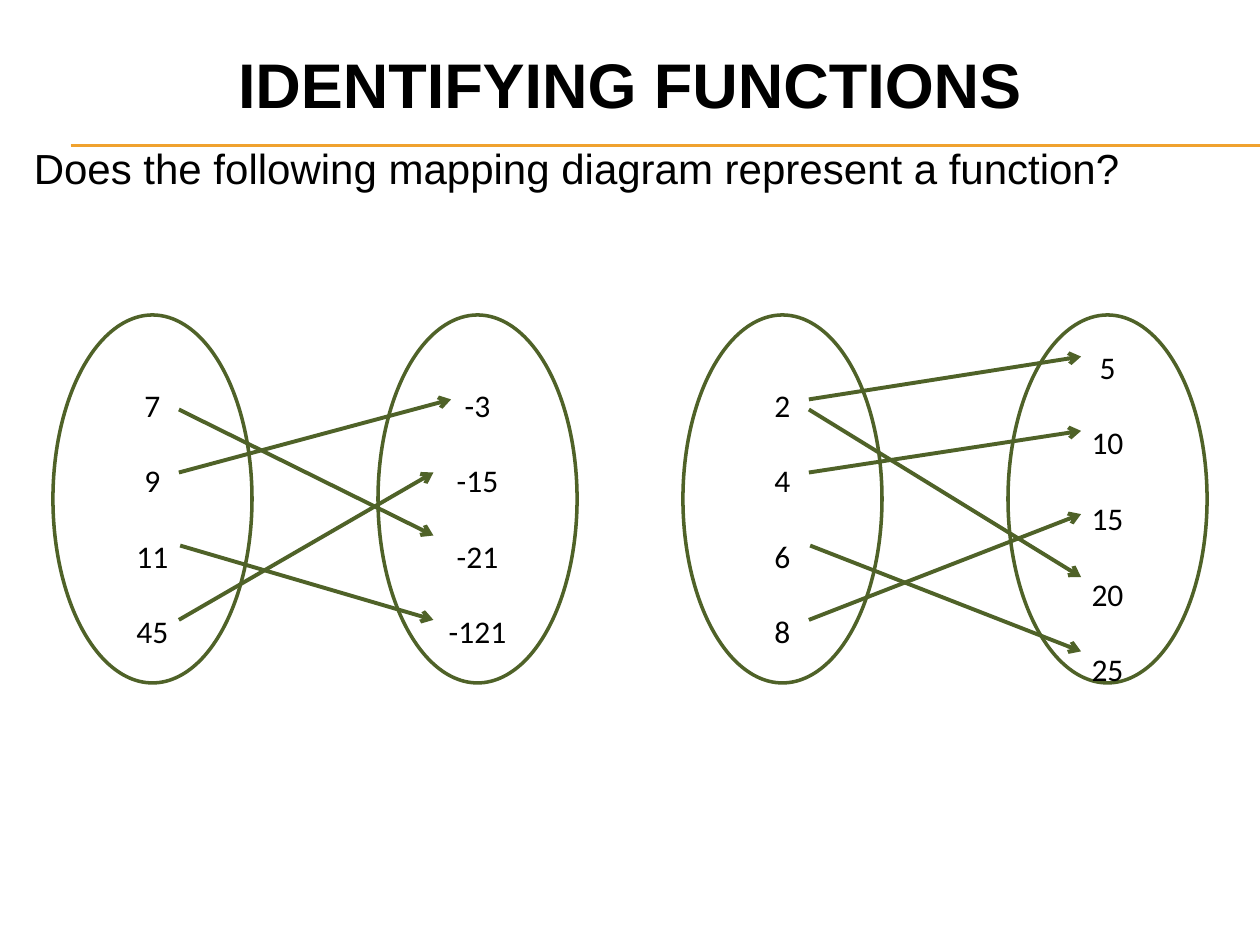
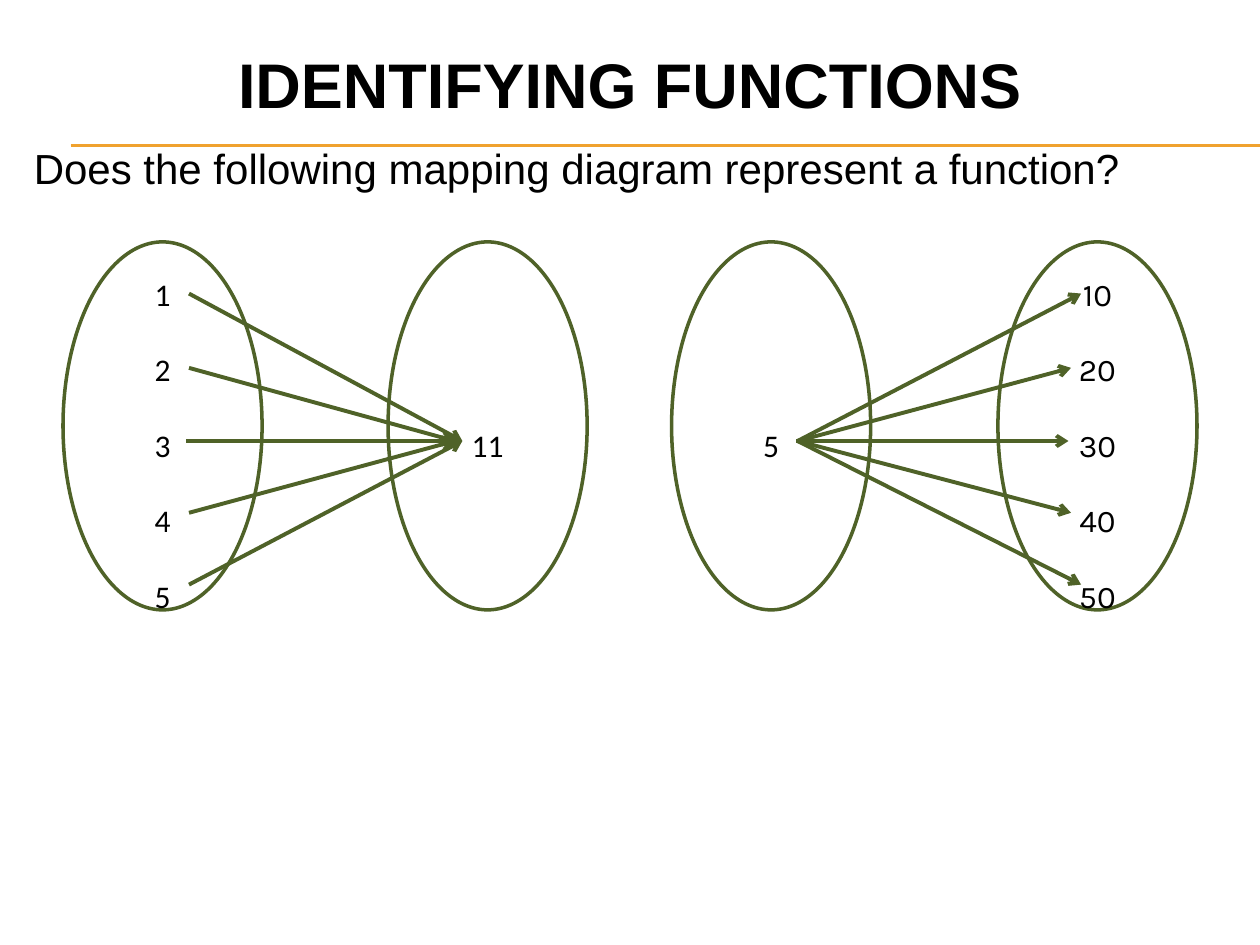
import pptx
import pptx.util
import pptx.dml.color
import pptx.enum.shapes
import pptx.enum.text
import pptx.oxml.ns
import lxml.etree

Inches, Pt = pptx.util.Inches, pptx.util.Pt
ALIGN, ANCHOR = pptx.enum.text.PP_ALIGN, pptx.enum.text.MSO_ANCHOR
BLACK, WHITE, GREEN, GOLD = "000000", "FFFFFF", "4F6228", "F0A22E"
OVAL_WIDTH, OVAL_HEIGHT = 1.58, 2.92


def write(paragraph, text, font, size, bold=False):
    run = paragraph.add_run()
    run.text = text
    run.font.name = font
    run.font.size = Pt(size)
    run.font.bold = bold
    run.font.color.rgb = pptx.dml.color.RGBColor.from_string(BLACK)


def draw_line(slide, start, end, color, width, arrow=False):
    line = slide.shapes.add_connector(
        pptx.enum.shapes.MSO_CONNECTOR.STRAIGHT, *map(Inches, start + end))
    line.line.color.rgb = pptx.dml.color.RGBColor.from_string(color)
    line.line.width = Pt(width)
    qn = pptx.oxml.ns.qn
    if arrow:
        lxml.etree.SubElement(line.line._get_or_add_ln(), qn("a:tailEnd"), type="arrow")
    lxml.etree.SubElement(line.element.spPr, qn("a:effectLst"))
    return line


# Each slide: top of its ovals, the ovals as (left, font, values),
# and the arrows as (from x, from y, to x, to y).
mapping_slides = [
    (2.5,
     [(0.42, "Calibri", ["7", "9", "11", "45"]),
      (3, "Calibri", ["-3", "-15", "-21", "-121"]),
      (5.42, "Calibri", ["2", "4", "6", "8"]),
      (8, "Calibri", ["5", "10", "15", "20", "25"])],
     [(1.42, 3.75, 3.58, 3.17), (1.43, 4.33, 3.44, 4.92),
      (1.42, 4.92, 3.44, 3.75), (1.42, 3.25, 3.44, 4.25),
      (6.42, 3.17, 8.58, 2.83), (6.42, 3.75, 8.58, 3.42),
      (6.43, 4.33, 8.58, 5.17), (6.42, 4.92, 8.58, 4.08),
      (6.42, 3.25, 8.58, 4.58)]),
    (1.92,
     [(0.5, "Calibri", ["1", "2", "3", "4", "5"]),
      (3.08, "Calibri", ["11"]),
      (5.33, "Calibri", ["5"]),
      (7.92, "Karla", ["10", "20", "30", "40", "50"])],
     [(1.5, 2.33, 3.67, 3.5), (1.5, 2.92, 3.61, 3.5), (1.48, 3.5, 3.65, 3.5),
      (1.5, 4.07, 3.61, 3.5), (1.5, 4.64, 3.67, 3.5),
      (6.33, 3.5, 8.58, 2.33), (6.33, 3.5, 8.5, 2.92), (6.32, 3.5, 8.48, 3.5),
      (6.33, 3.5, 8.5, 4.07), (6.33, 3.5, 8.58, 4.64)]),
]

deck = pptx.Presentation()
deck.slide_width, deck.slide_height = Inches(10), Inches(7.5)
title_only = deck.slide_layouts[5]

for oval_top, ovals, arrows in mapping_slides:
    slide = deck.slides.add_slide(title_only)

    title = slide.shapes.title
    title.left, title.top, title.width, title.height = map(Inches, (0, 0.25, 10, 0.83))
    title.text_frame.vertical_anchor = ANCHOR.MIDDLE
    heading = title.text_frame.paragraphs[0]
    heading.alignment = ALIGN.CENTER
    write(heading, "IDENTIFYING FUNCTIONS", "Arial", 36, bold=True)

    question = slide.shapes.add_textbox(*map(Inches, (0.17, 1.08, 9.5, 0.67))).text_frame
    question.word_wrap = True
    question.paragraphs[0].space_before = Pt(4.8)
    write(question.paragraphs[0],
          "Does the following mapping diagram represent a function?", "Arial", 24)

    for left, font, values in ovals:
        oval = slide.shapes.add_shape(
            pptx.enum.shapes.MSO_SHAPE.OVAL,
            *map(Inches, (left, oval_top, OVAL_WIDTH, OVAL_HEIGHT)))
        oval.shadow.inherit = False
        oval.fill.solid()
        oval.fill.fore_color.rgb = pptx.dml.color.RGBColor.from_string(WHITE)
        oval.line.color.rgb = pptx.dml.color.RGBColor.from_string(GREEN)
        oval.line.width = Pt(2)
        frame = oval.text_frame
        frame.word_wrap = True
        frame.vertical_anchor = ANCHOR.MIDDLE
        for index, value in enumerate(values):
            paragraph = frame.add_paragraph() if index else frame.paragraphs[0]
            paragraph.alignment = ALIGN.CENTER
            paragraph.line_spacing = 2.0
            write(paragraph, value, font, 18)

    for from_x, from_y, to_x, to_y in arrows:
        draw_line(slide, (from_x, from_y), (to_x, to_y), GREEN, 2.25, arrow=True)

# The double rule under the title belongs to the layout, so both slides share it.
for rule_y in (1.15, 1.16):
    rule = draw_line(slide, (0.56, rule_y), (10, rule_y), GOLD, 0.75)
    title_only.shapes.element.append(rule.element)

deck.save("out.pptx")
